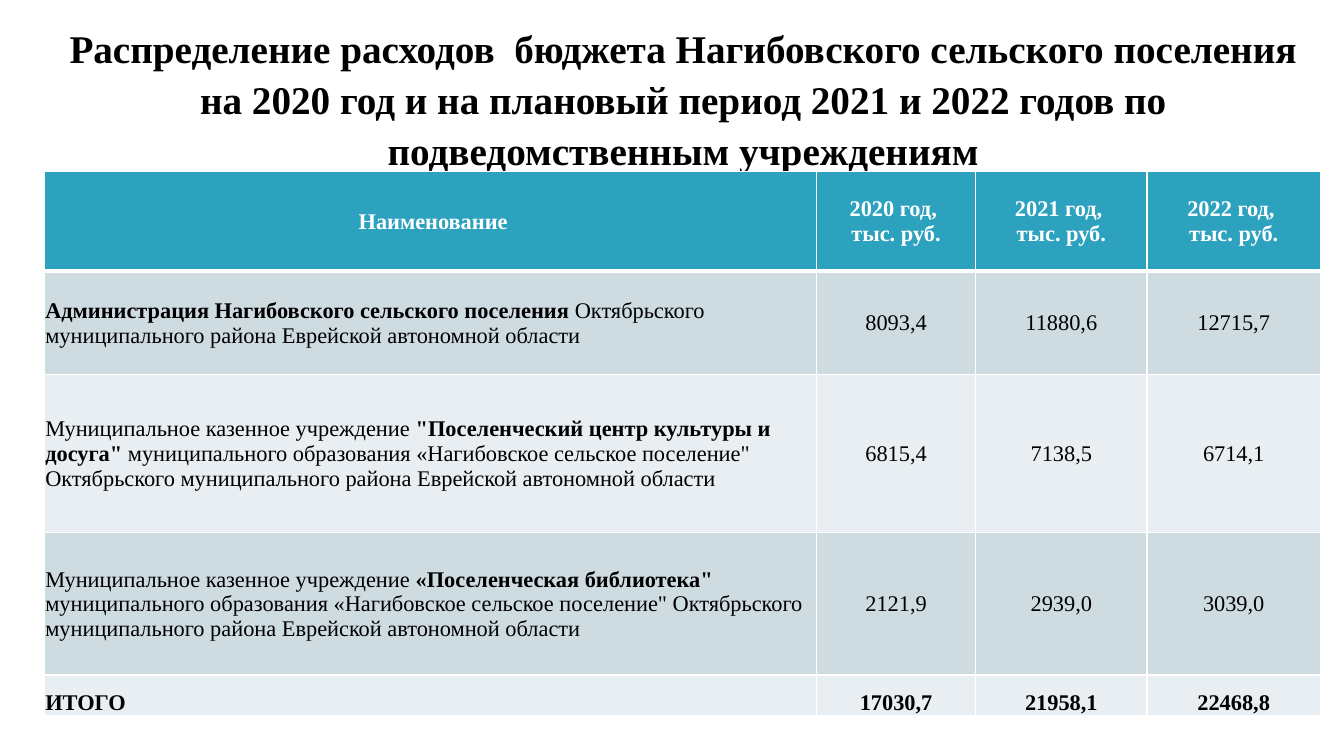
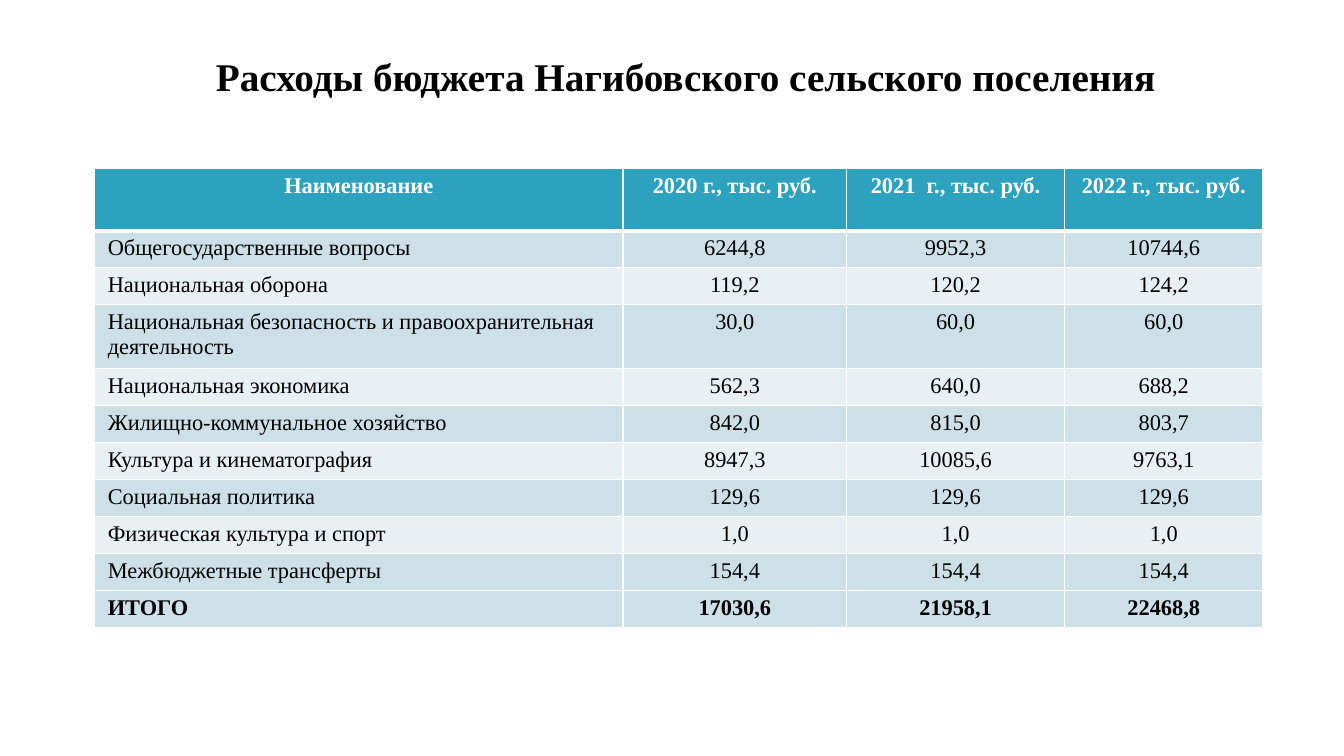
from dataclasses import dataclass

import lxml.etree
import pptx
import pptx.dml.color
import pptx.enum.text
import pptx.oxml.ns
import pptx.util

RGB = pptx.dml.color.RGBColor
ALIGN = pptx.enum.text.PP_ALIGN
ANCHOR = pptx.enum.text.MSO_ANCHOR
qn = pptx.oxml.ns.qn

# Shared look
WIDE, HIGH = pptx.util.Inches(13.33), pptx.util.Inches(7.5)
FONT = "Times New Roman"
BLACK, WHITE = RGB(0, 0, 0), RGB(255, 255, 255)
TEAL = RGB(0x2D, 0xA2, 0xBF)
STEEL, MIST = RGB(0xCE, 0xDC, 0xE1), RGB(0xE8, 0xEE, 0xF1)
SKY, FROST = RGB(0xCD, 0xE0, 0xE8), RGB(0xE8, 0xF0, 0xF4)


@dataclass(frozen=True)
class Run:
    text: str
    bold: bool = False


Line = list[Run]


@dataclass(frozen=True)
class Title:
    text: str
    box: tuple[float, float, float, float]  # percent of the slide
    anchor: ANCHOR
    space: float = 1.0


@dataclass(frozen=True)
class Grid:
    left: float  # lengths in percent of the slide
    top: float
    cols: list[float]
    rows: list[float]
    head: list[list[str]]
    body: list[tuple[Line, str]]  # name and figures
    total: str
    bands: tuple[RGB, RGB]
    last: RGB
    inset: tuple[float, float, float, float]  # inches
    anchor: ANCHOR
    foot: ANCHOR


def across(share: float) -> int:
    return round(WIDE * share / 100)


def down(share: float) -> int:
    return round(HIGH * share / 100)


def write(par, line: Line, size: float, color: RGB, align: ALIGN) -> None:
    par.alignment = align
    for part in line:
        run = par.add_run()
        run.text = part.text
        run.font.name, run.font.size = FONT, pptx.util.Pt(size)
        run.font.bold, run.font.color.rgb = part.bold, color


def draw_title(slide, title: Title) -> None:
    left, top, width, height = title.box
    box = slide.shapes.add_textbox(
        across(left), down(top), across(width), down(height))
    frame = box.text_frame
    frame.word_wrap, frame.vertical_anchor = True, title.anchor
    par = frame.paragraphs[0]
    par.line_spacing = title.space
    write(par, [Run(title.text, True)], 28, BLACK, ALIGN.CENTER)


def rule(cell, above: int, below: int) -> None:
    """White borders, with their own weight above and below."""
    props = cell._tc.get_or_add_tcPr()
    for i, (side, weight) in enumerate(
            [("L", 1), ("R", 1), ("T", above), ("B", below)]):
        edge = lxml.etree.Element(
            qn(f"a:ln{side}"), w=str(pptx.util.Pt(weight)))
        fill = lxml.etree.SubElement(edge, qn("a:solidFill"))
        lxml.etree.SubElement(fill, qn("a:srgbClr"), val=str(WHITE))
        props.insert(i, edge)


def draw_cell(cell, lines: list[Line], grid: Grid, row: int, col: int) -> None:
    end = row == len(grid.rows) - 1
    if row == 0:
        fill = TEAL
    else:
        fill = grid.last if end else grid.bands[(row - 1) % 2]
    cell.fill.solid()
    cell.fill.fore_color.rgb = fill
    rule(cell, 3 if row == 1 else 1, 3 if row == 0 else 1)
    (cell.margin_left, cell.margin_top, cell.margin_right,
     cell.margin_bottom) = map(pptx.util.Inches, grid.inset)
    cell.vertical_anchor = grid.foot if end else grid.anchor
    frame = cell.text_frame
    for i, line in enumerate(lines):
        par = frame.add_paragraph() if i else frame.paragraphs[0]
        write(par, line, 16, BLACK if row else WHITE,
              ALIGN.LEFT if row and col == 0 else ALIGN.CENTER)


def draw_grid(slide, grid: Grid) -> None:
    table = slide.shapes.add_table(
        len(grid.rows), len(grid.cols), across(grid.left), down(grid.top),
        across(sum(grid.cols)), down(sum(grid.rows))).table
    table.horz_banding = False
    for col, width in zip(table.columns, grid.cols):
        col.width = across(width)
    for row, height in zip(table.rows, grid.rows):
        row.height = down(height)
    cells = [[[[Run(text, True)] for text in texts] for texts in grid.head]]
    for name, nums in grid.body:
        cells.append([[name]] + [[[Run(num)]] for num in nums.split()])
    cells.append([[[Run(text, True)]]
                  for text in ["ИТОГО", *grid.total.split()]])
    for r, row in enumerate(cells):
        for c, lines in enumerate(row):
            draw_cell(table.cell(r, c), lines, grid, r, c)


# Slide 1: spending by institution
REGION = "муниципального района Еврейской автономной области"
STATE = "Муниципальное казенное учреждение "
TOWN = ("муниципального образования «Нагибовское сельское поселение\" "
        f"Октябрьского {REGION}")
UNITS_TITLE = Title(
    "Распределение расходов  бюджета Нагибовского сельского поселения "
    "на 2020 год и на плановый период 2021 и 2022 годов по "
    "подведомственным учреждениям",
    (3.3, 6.67, 95.05, 12.27), ANCHOR.MIDDLE, 1.08)
UNITS = Grid(
    left=3.3, top=22.67,
    cols=[57.45, 11.85, 12.75, 12.9],
    rows=[13.15, 13.73, 20.93, 18.8, 5.33],
    head=[[" Наименование"]] + [[f"{year} год, ", "тыс. руб."]
                                for year in range(2020, 2023)],
    body=[
        ([Run("Администрация Нагибовского сельского поселения ", True),
          Run(f"Октябрьского {REGION}")], "8093,4 11880,6 12715,7"),
        ([Run(STATE), Run("\"Поселенческий центр культуры и досуга\" ", True),
          Run(TOWN)], "6815,4 7138,5 6714,1"),
        ([Run(STATE), Run("«Поселенческая библиотека\" ", True),
          Run(TOWN)], "2121,9 2939,0 3039,0"),
    ],
    total="17030,7 21958,1 22468,8",
    bands=(STEEL, MIST), last=MIST,
    inset=(0.01, 0.01, 0.01, 0), anchor=ANCHOR.MIDDLE, foot=ANCHOR.BOTTOM)

# Slide 2: spending by field
FIELDS_TITLE = Title("Расходы бюджета Нагибовского сельского поселения",
                     (6.68, 6.27, 88.67, 7.6), ANCHOR.TOP)
FIELDS = Grid(
    left=7.05, top=22.27,
    cols=[39.3, 16.65, 16.2, 14.78],
    rows=[8.27] + [4.87] * 2 + [7.87] + [4.87] * 7,
    head=[["Наименование"], ["2020 г., тыс. руб."],
          ["2021  г., тыс. руб."], ["2022 г., тыс. руб."]],
    body=[([Run(name)], nums) for name, nums in [
        ("Общегосударственные вопросы", "6244,8 9952,3 10744,6"),
        ("Национальная оборона", "119,2 120,2 124,2"),
        ("Национальная безопасность и правоохранительная деятельность",
         "30,0 60,0 60,0"),
        ("Национальная экономика", "562,3 640,0 688,2"),
        ("Жилищно-коммунальное хозяйство", "842,0 815,0 803,7"),
        ("Культура и кинематография", "8947,3 10085,6 9763,1"),
        ("Социальная политика", "129,6 129,6 129,6"),
        ("Физическая культура и спорт", "1,0 1,0 1,0"),
        ("Межбюджетные трансферты", "154,4 154,4 154,4"),
    ]],
    total="17030,6 21958,1 22468,8",
    bands=(SKY, FROST), last=SKY,
    inset=(0.13, 0.05, 0.13, 0.05), anchor=ANCHOR.TOP, foot=ANCHOR.TOP)


def main() -> None:
    deck = pptx.Presentation()
    deck.slide_width, deck.slide_height = WIDE, HIGH
    for title, grid in [(UNITS_TITLE, UNITS), (FIELDS_TITLE, FIELDS)]:
        slide = deck.slides.add_slide(deck.slide_layouts[6])
        draw_title(slide, title)
        draw_grid(slide, grid)
    deck.save("out.pptx")


if __name__ == "__main__":
    main()
